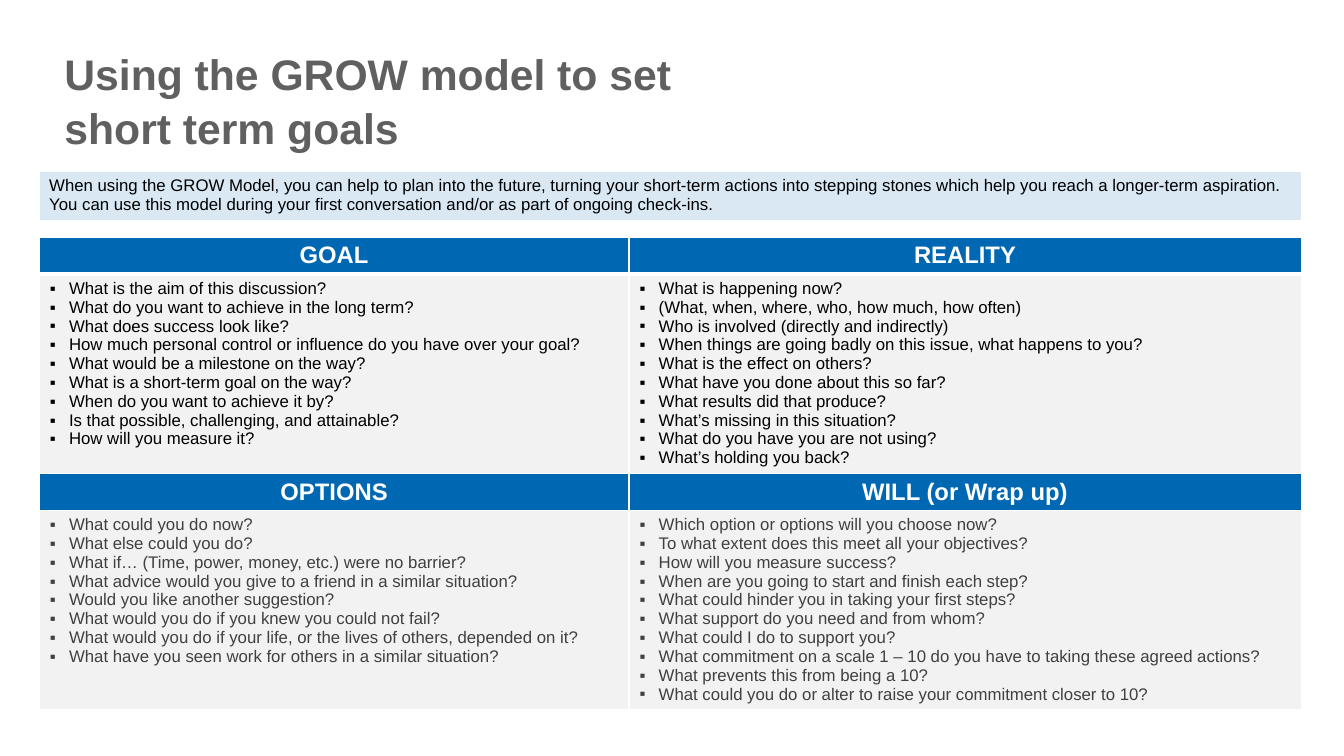
import pptx
import pptx.util
import pptx.dml.color
import pptx.enum.text
import pptx.oxml.ns
from lxml import etree
from pptx.util import Cm, Pt

COLORS = {
    "title": "606060",
    "blue": "0068B3",
    "panel": "F2F2F2",
    "white": "FFFFFF",
    "black": "000000",
    "gray": "404040",
}
FONT = "Arial"
LEFT = Cm(0.99)
WIDTH = Cm(31.8)

GOAL = [
    "What is the aim of this discussion?",
    "What do you want to achieve in the long term?",
    "What does success look like?",
    "How much personal control or influence do you have over your goal?",
    "What would be a milestone on the way?",
    "What is a short-term goal on the way?",
    "When do you want to achieve it by?",
    "Is that possible, challenging, and attainable?",
    "How will you measure it?",
]
REALITY = [
    "What is happening now?",
    "(What, when, where, who, how much, how often)",
    "Who is involved (directly and indirectly)",
    "When things are going badly on this issue, what happens to you?",
    "What is the effect on others?",
    "What have you done about this so far?",
    "What results did that produce?",
    "What’s missing in this situation?",
    "What do you have you are not using?",
    "What’s holding you back?",
]
OPTIONS = [
    "What could you do now?",
    "What else could you do?",
    "What if… (Time, power, money, etc.) were no barrier?",
    "What advice would you give to a friend in a similar situation?",
    "Would you like another suggestion?",
    "What would you do if you knew you could not fail?",
    "What would you do if your life, or the lives of others, depended on it?",
    "What have you seen work for others in a similar situation?",
]
WILL = [
    "Which option or options will you choose now?",
    "To what extent does this meet all your objectives?",
    "How will you measure success?",
    "When are you going to start and finish each step?",
    "What could hinder you in taking your first steps?",
    "What support do you need and from whom?",
    "What could I do to support you?",
    "What commitment on a scale 1 – 10 do you have to taking these agreed actions?",
    "What prevents this from being a 10?",
    "What could you do or alter to raise your commitment closer to 10?",
]
# Each band: question colour, then (heading, questions) for each column
BANDS = [
    ("black", [("GOAL", GOAL), ("REALITY", REALITY)]),
    ("gray", [("OPTIONS", OPTIONS), ("WILL (or Wrap up)", WILL)]),
]


def rgb(name):
    return pptx.dml.color.RGBColor.from_string(COLORS[name])


def add_run(paragraph, text, size, color, bold=False):
    run = paragraph.add_run()
    run.text = text
    run.font.name = FONT
    run.font.size = Pt(size)
    run.font.bold = bold
    run.font.color.rgb = rgb(color)


def next_paragraph(text_frame, index):
    return text_frame.add_paragraph() if index else text_frame.paragraphs[0]


def add_child(parent, tag, **attributes):
    return etree.SubElement(parent, pptx.oxml.ns.qn(tag), **attributes)


def add_bullet(paragraph):
    properties = paragraph._p.get_or_add_pPr()
    properties.set("marL", str(Cm(0.48)))
    properties.set("indent", str(-Cm(0.48)))
    add_child(properties, "a:buFont", typeface=FONT)
    add_child(properties, "a:buChar", char="▪")


def format_cell(cell, fill, top=1, bottom=1):
    """Set margins, fill and white borders; top and bottom are line widths in points."""
    cell.margin_left = cell.margin_right = Cm(0.27)
    cell.margin_top = cell.margin_bottom = Cm(0.13)
    properties = cell._tc.get_or_add_tcPr()
    for side, width in (("L", 1), ("R", 1), ("T", top), ("B", bottom)):
        line = add_child(properties, f"a:ln{side}", w=str(Pt(width)))
        solid = add_child(line, "a:solidFill")
        add_child(solid, "a:srgbClr", val=COLORS["white"])
    cell.fill.solid()
    cell.fill.fore_color.rgb = rgb(fill)


def add_plain_table(slide, rows, columns, left, top, width, height):
    table = slide.shapes.add_table(rows, columns, left, top, width, height).table
    table.first_row = False
    table.horz_banding = False
    return table


def add_title(slide, left, top, width, height):
    title = slide.shapes.title
    title.left, title.top, title.width, title.height = left, top, width, height
    text_frame = title.text_frame
    text_frame.auto_size = pptx.enum.text.MSO_AUTO_SIZE.NONE
    text_frame.vertical_anchor = pptx.enum.text.MSO_ANCHOR.TOP
    for index, text in enumerate(["Using the GROW model to set", "short term goals"]):
        paragraph = next_paragraph(text_frame, index)
        paragraph.alignment = pptx.enum.text.PP_ALIGN.LEFT
        paragraph.line_spacing = 1.06
        add_run(paragraph, text, 30.5, "title", bold=True)


def add_introduction(slide, left, top, width, height):
    cell = add_plain_table(slide, 1, 1, left, top, width, height).cell(0, 0)
    format_cell(cell, "blue")
    cell.margin_left = cell.margin_right = Cm(0.25)
    tint = cell._tc.tcPr.find(pptx.oxml.ns.qn("a:solidFill"))[0]
    add_child(tint, "a:alpha", val="15000")
    add_run(
        cell.text_frame.paragraphs[0],
        "When using the GROW Model, you can help to plan into the future, turning your "
        "short-term actions into stepping stones which help you reach a longer-term "
        "aspiration. You can use this model during your first conversation and/or as "
        "part of ongoing check-ins.",
        12, "black",
    )


def add_grow_table(slide, left, top, width, height):
    table = add_plain_table(slide, 2 * len(BANDS), 2, left, top, width, height)
    table.columns[0].width = Cm(14.86)
    table.columns[1].width = width - Cm(14.86)
    heading_height = Cm(0.91)
    for band, (color, topics) in enumerate(BANDS):
        table.rows[2 * band].height = heading_height
        table.rows[2 * band + 1].height = height // len(BANDS) - heading_height
        divider = 1 if band else 3
        for column, (heading, questions) in enumerate(topics):
            cell = table.cell(2 * band, column)
            format_cell(cell, "blue", bottom=divider)
            paragraph = cell.text_frame.paragraphs[0]
            paragraph.alignment = pptx.enum.text.PP_ALIGN.CENTER
            add_run(paragraph, heading, 17, "white", bold=True)

            cell = table.cell(2 * band + 1, column)
            format_cell(cell, "panel", top=divider)
            for index, question in enumerate(questions):
                paragraph = next_paragraph(cell.text_frame, index)
                add_bullet(paragraph)
                add_run(paragraph, question, 12, color)


def main():
    presentation = pptx.Presentation()
    presentation.slide_width = Cm(33.87)
    presentation.slide_height = Cm(19.05)
    slide = presentation.slides.add_slide(presentation.slide_layouts[5])
    add_title(slide, Cm(1.37), Cm(0.99), Cm(25), Cm(1.96))
    add_grow_table(slide, LEFT, Cm(5.97), WIDTH, Cm(11.86))
    add_introduction(slide, LEFT, Cm(4.32), WIDTH, Cm(1.23))
    presentation.save("out.pptx")


if __name__ == "__main__":
    main()
